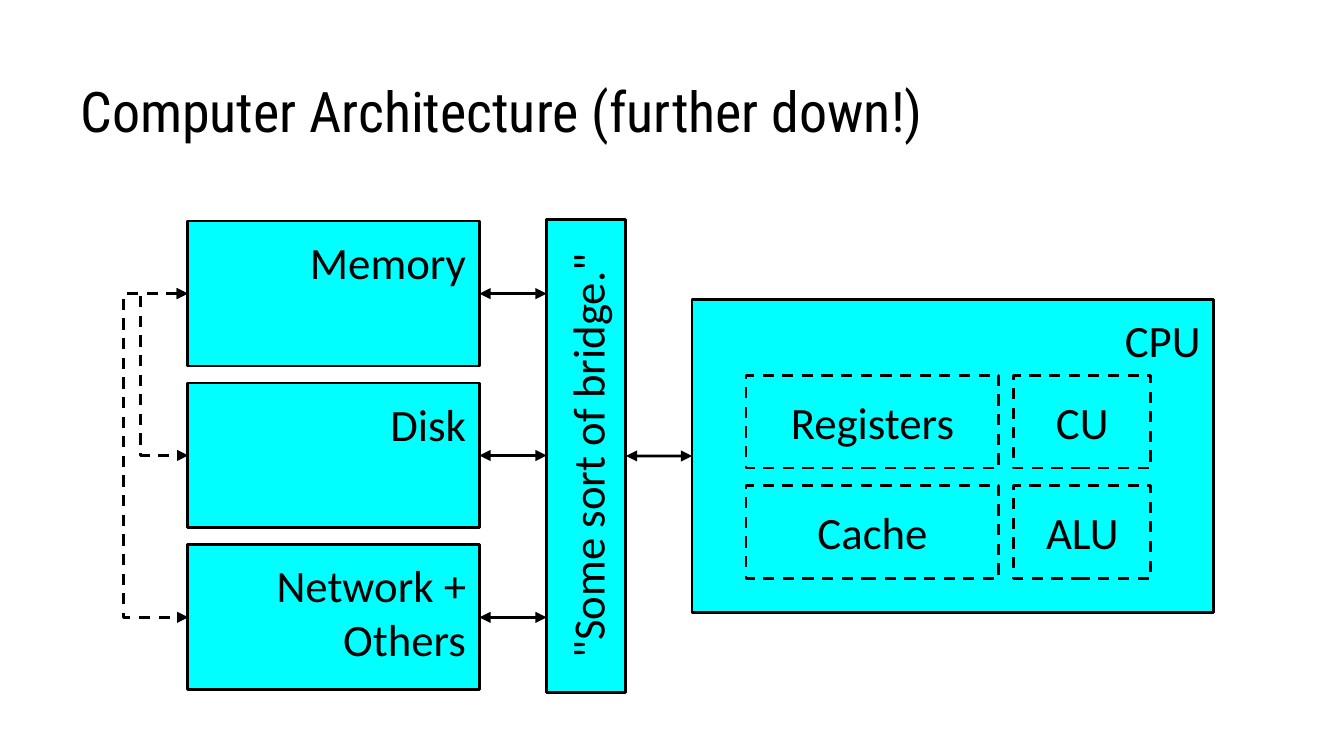
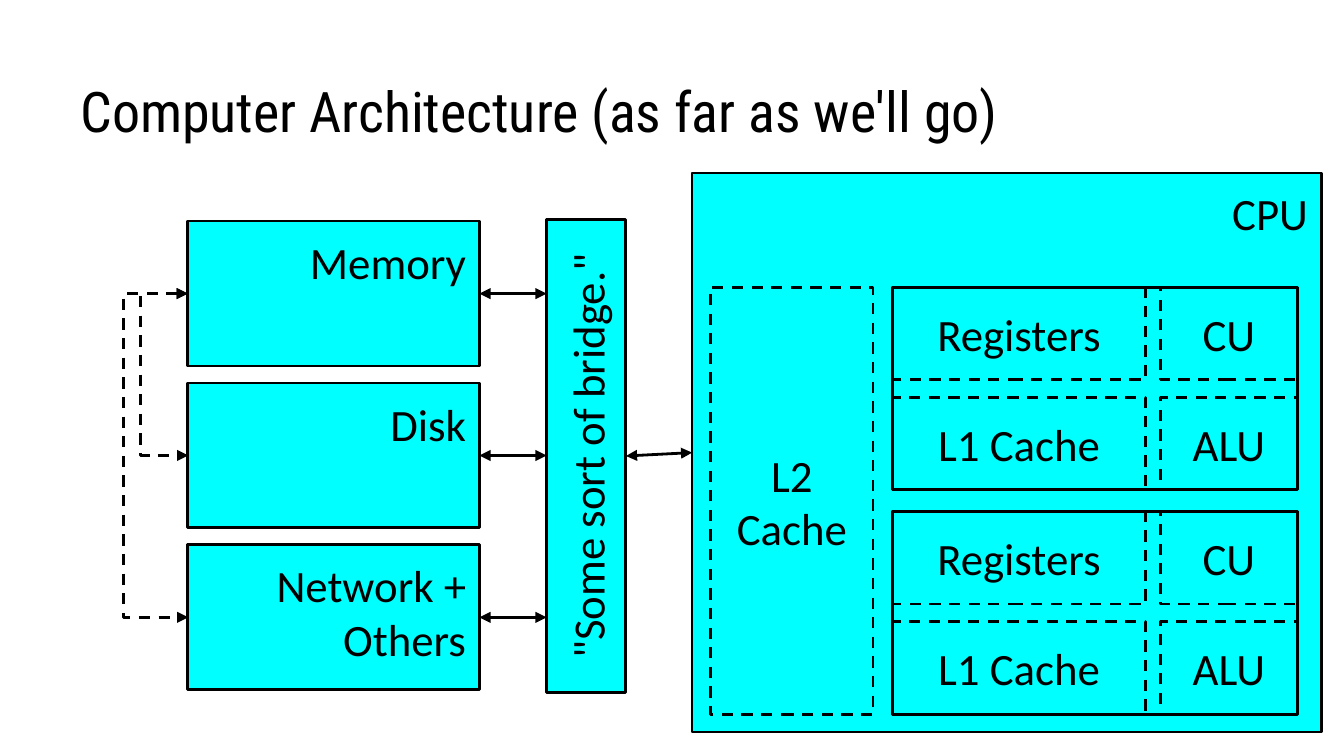
from lxml.etree import SubElement
from pptx import Presentation
from pptx.dml.color import RGBColor
from pptx.enum.dml import MSO_LINE
from pptx.enum.shapes import MSO_CONNECTOR, MSO_SHAPE
from pptx.enum.text import MSO_ANCHOR, PP_ALIGN
from pptx.oxml.ns import qn
from pptx.util import Cm, Pt

COLOURS = {"ink": "000000", "block": "00FFFF"}
INK = RGBColor.from_string(COLOURS["ink"])
BLOCK = RGBColor.from_string(COLOURS["block"])
TITLE_FONT, BODY_FONT = "Roboto Condensed", "Calibri"

DEVICES = ["Memory", "Disk", "Network + Others"]
DEVICE_LEFT, DEVICE_TOP, DEVICE_PITCH = 3.55, 4.18, 3.06
DEVICE_WIDTH, DEVICE_HEIGHT = 5.51, 2.74
BRIDGE_X, BRIDGE_Y = 11.08, 8.62  # centre of the bridge
BRIDGE_LENGTH, BRIDGE_DEPTH = 8.95, 1.5
ELBOW_WIDTH = 0.01  # the elbow's bend is a multiple of this
ELBOWS = [(2, 1.21), (1, 0.89)]  # device joined to memory, reach to the left
CELL_HEIGHT, ROW_PITCH = 1.75, 2.08
COLUMNS = [(0, 4.78), (5.06, 2.59)]  # offset, width

SLIDES = [
    {
        "title": "Computer Architecture (further down!)",
        "cpu": (13.08, 5.66, 9.86, 5.92),
        "cores": [(14.1, 7.1)],
        "cache": "Cache",
        "detailed": False,
    },
    {
        "title": "Computer Architecture (as far as we'll go)",
        "cpu": (13.08, 3.27, 11.89, 10.57),
        "cores": [(16.87, 5.43), (16.87, 9.67)],
        "cache": "L1 Cache",
        "detailed": True,
    },
]


def add_block(page, place, lines=(), align=PP_ALIGN.CENTER,
              anchor=MSO_ANCHOR.TOP, dashed=False, filled=True):
    """Draw an outlined rectangle; place is left, top, width, height in cm."""
    box = page.shapes.add_shape(MSO_SHAPE.RECTANGLE, *map(Cm, place))
    box.shadow.inherit = False
    if filled:
        box.fill.solid()
        box.fill.fore_color.rgb = BLOCK
    else:
        box.fill.background()
    box.line.color.rgb = INK
    box.line.width = Pt(1.5)
    if dashed:
        box.line.dash_style = MSO_LINE.DASH
    frame = box.text_frame
    frame.word_wrap = True
    frame.vertical_anchor = anchor
    frame.margin_left = frame.margin_right = Cm(0.25)
    frame.margin_top = frame.margin_bottom = Cm(0.25)
    frame.text = "\n".join(lines)
    for para in frame.paragraphs:
        para.alignment = align
        para.font.name = BODY_FONT
        para.font.size = Pt(24)
        para.font.color.rgb = INK
    return box


def add_arrow(page, kind, start, end, dashed=False):
    """Draw a two-headed connector between two points in EMU."""
    arrow = page.shapes.add_connector(kind, *start, *end)
    arrow.line.color.rgb = INK
    arrow.line.width = Pt(1.5)
    if dashed:
        arrow.line.dash_style = MSO_LINE.DASH
    properties = arrow.element.spPr
    outline = properties.find(qn("a:ln"))
    for end_name in ("a:headEnd", "a:tailEnd"):
        SubElement(outline, qn(end_name), type="triangle")
    SubElement(properties, qn("a:effectLst"))
    return arrow


deck = Presentation()
deck.slide_width, deck.slide_height = Cm(25.4), Cm(14.29)

for content in SLIDES:
    page = deck.slides.add_slide(deck.slide_layouts[6])

    title = page.shapes.add_textbox(Cm(1.27), Cm(0.58), Cm(22.86), Cm(2.39))
    frame = title.text_frame
    frame.word_wrap = True
    frame.vertical_anchor = MSO_ANCHOR.BOTTOM
    frame.margin_left = frame.margin_right = Cm(0.25)
    frame.margin_top = frame.margin_bottom = Cm(0.25)
    frame.text = content["title"]
    para = frame.paragraphs[0]
    para.font.name = TITLE_FONT
    para.font.size = Pt(30)
    para.font.color.rgb = INK

    cpu = add_block(page, content["cpu"], ["CPU"], PP_ALIGN.RIGHT)
    devices = []
    for row, name in enumerate(DEVICES):
        place = (DEVICE_LEFT, DEVICE_TOP + row * DEVICE_PITCH,
                 DEVICE_WIDTH, DEVICE_HEIGHT)
        devices.append(add_block(page, place, [name], PP_ALIGN.RIGHT))
    bridge = add_block(
        page,
        (BRIDGE_X - BRIDGE_LENGTH / 2, BRIDGE_Y - BRIDGE_DEPTH / 2,
         BRIDGE_LENGTH, BRIDGE_DEPTH),
        ['"Some sort of bridge."'])
    bridge.rotation = 270

    # The bridge is turned, so its joined ends are placed again by hand.
    bridge_right = (Cm(BRIDGE_X + BRIDGE_DEPTH / 2), Cm(BRIDGE_Y))
    cpu_left = (cpu.left, cpu.top + cpu.height // 2)
    arrow = add_arrow(page, MSO_CONNECTOR.STRAIGHT, bridge_right, cpu_left)
    arrow.begin_connect(bridge, 2)
    arrow.begin_x, arrow.begin_y = bridge_right
    arrow.end_connect(cpu, 1)

    for device in devices:
        middle = device.top + device.height // 2
        bridge_left = (Cm(BRIDGE_X - BRIDGE_DEPTH / 2), middle)
        arrow = add_arrow(page, MSO_CONNECTOR.STRAIGHT,
                          (device.left + device.width, middle), bridge_left)
        arrow.begin_connect(device, 3)
        if device is devices[1]:
            arrow.end_connect(bridge, 0)
            arrow.end_x, arrow.end_y = bridge_left

    memory = devices[0]
    for row, reach in ELBOWS:
        device = devices[row]
        elbow = add_arrow(
            page, MSO_CONNECTOR.ELBOW,
            (memory.left, memory.top + memory.height // 2),
            (device.left, device.top + device.height // 2), dashed=True)
        elbow.begin_connect(memory, 1)
        elbow.end_connect(device, 1)
        elbow.width = Cm(ELBOW_WIDTH)
        bend = round(-reach / ELBOW_WIDTH * 100000)
        guides = elbow.element.spPr.find(qn("a:prstGeom")).get_or_add_avLst()
        SubElement(guides, qn("a:gd"), name="adj1", fmla=f"val {bend}")

    if content["detailed"]:
        add_block(page, (13.43, 5.43, 3.07, 8.08), ["L2", "Cache"],
                  anchor=MSO_ANCHOR.MIDDLE, dashed=True)

    parts = [["Registers", "CU"], [content["cache"], "ALU"]]
    for core_left, core_top in content["cores"]:
        for row, names in enumerate(parts):
            for name, (offset, width) in zip(names, COLUMNS):
                place = (core_left + offset, core_top + row * ROW_PITCH,
                         width, CELL_HEIGHT)
                add_block(page, place, [name], anchor=MSO_ANCHOR.MIDDLE,
                          dashed=True)
        if content["detailed"]:
            add_block(page, (core_left, core_top, 7.65, 3.83), filled=False)

deck.save("out.pptx")
